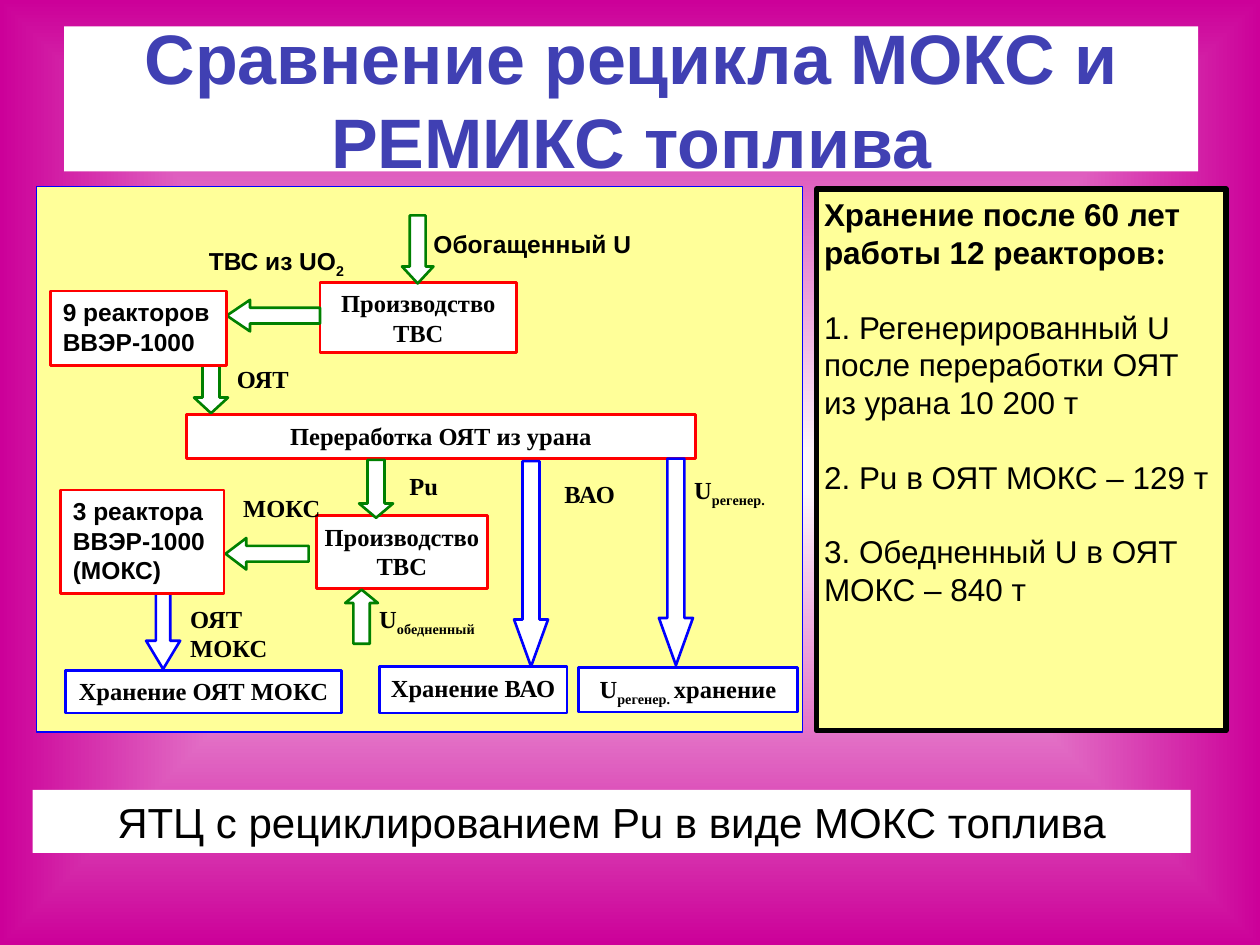
"""Build a slide comparing MOX and REMIX fuel recycling, with a flow diagram."""
from dataclasses import dataclass

from lxml import etree
from pptx import Presentation
from pptx.dml.color import RGBColor
from pptx.enum.shapes import MSO_SHAPE
from pptx.enum.text import MSO_ANCHOR, PP_ALIGN
from pptx.oxml.ns import qn
from pptx.util import Inches, Pt

RECT = MSO_SHAPE.RECTANGLE
DOWN, UP, LEFT = MSO_SHAPE.DOWN_ARROW, MSO_SHAPE.UP_ARROW, MSO_SHAPE.LEFT_ARROW
TOP, MID = MSO_ANCHOR.TOP, MSO_ANCHOR.MIDDLE
START, MIDST = PP_ALIGN.LEFT, PP_ALIGN.CENTER


@dataclass(frozen=True)
class Theme:
    white: str = "FFFFFF"
    black: str = "000000"
    pink: str = "CC0099"
    cream: str = "FFFF99"
    navy: str = "4040B3"
    red: str = "FF0000"
    blue: str = "0000FF"
    green: str = "008000"
    sans: str = "Arial"
    serif: str = "Times New Roman"
    head: int = 40
    foot: int = 24
    body: int = 18
    note: int = 14
    gap: int = 21


T = Theme()
COLS = 100
PANEL = (2.9, 14.8, 60.8, 43.3)
SIDE = (64.8, 15, 32.5, 43)
HEAD = (5.1, 2.1, 90, 11.5)
FOOT = (2.6, 62.7, 91.9, 5)

TITLE = "Сравнение рецикла МОКС и РЕМИКС топлива"
CLOSE = "ЯТЦ с рециклированием Pu в виде МОКС топлива"
LEAD = "Хранение после 60 лет работы 12 реакторов"
FACTS = [
    "1. Регенерированный U после переработки ОЯТ из урана 10 200 т",
    "2. Pu в ОЯТ МОКС – 129 т",
    "3. Обедненный U в ОЯТ МОКС – 840 т",
]
STEPS = [
    ("Переработка ОЯТ из урана", (14.8, 32.9, 40.4, 3.5), T.red, 0.06),
    ("Производство ТВС", (25.4, 22.4, 15.6, 5.6), T.red, 0.02),
    ("Производство ТВС", (25.1, 40.9, 13.6, 5.8), T.red, 0.02),
    ("Хранение ОЯТ МОКС", (5.2, 53.2, 21.9, 3.4), T.blue, 0.02),
    ("Хранение ВАО", (30.1, 52.9, 14.9, 3.7), T.blue, 0.02),
    ("U_регенер. _хранение", (45.9, 53, 17.4, 3.5), T.blue, 0),
]
ARROWS = [
    (DOWN, (31.9, 17.1, 2.5, 5.4), T.green, 0.5, 0.54),
    (LEFT, (18, 23.8, 7.4, 2.5), T.green, 0.5, 0.74),
    (DOWN, (15.4, 27.8, 2.7, 5), T.green, 0.5, 0.46),
    (DOWN, (28.5, 36.5, 2.7, 4.6), T.green, 0.5, 0.42),
    (LEFT, (17.9, 42.7, 6.6, 2.5), T.green, 0.5, 0.66),
    (UP, (27.4, 46.8, 2.6, 4.3), T.green, 0.5, 0.41),
    (DOWN, (11.6, 46.7, 2.7, 6.4), T.blue, 0.42, 0.83),
    (DOWN, (40.8, 36.6, 2.7, 16.3), T.blue, 0.5, 1.38),
    (DOWN, (52.3, 36.4, 2.7, 16.4), T.blue, 0.5, 1.39),
]
PLANTS = [
    ("9 реакторов ВВЭР-1000", (4, 23.1, 14, 5.9)),
    ("3 реактора ВВЭР-1000 (МОКС)", (4.8, 38.9, 13, 8.2)),
]
LABELS = [
    ("Обогащенный U", (34.4, 18.2, 16.8, 2.6), T.sans, START),
    ("ТВС из UO_2", (15.8, 19.5, 12.3, 4), T.sans, MIDST),
    ("ОЯТ", (18.8, 28.9, 5, 2.5), T.serif, START),
    ("U_регенер.", (55.1, 37.7, 6.8, 3.6), T.serif, START),
    ("ВАО", (44.8, 38, 5, 2.5), T.serif, START),
    ("Pu", (32.5, 37.4, 4.7, 2), T.serif, START),
    ("МОКС", (19.3, 39.1, 7, 2.5), T.serif, START),
    ("ОЯТ МОКС", (15.1, 47.9, 8, 4.3), T.serif, START),
    ("U_обедненный", (30.1, 47.9, 9.8, 3.3), T.serif, START),
]

deck = Presentation()
deck.slide_width, deck.slide_height = Inches(10), Inches(7.5)
slide = deck.slides.add_slide(deck.slide_layouts[5])
unit = deck.slide_width / COLS


def place(cell):
    return [round(n * unit) for n in cell]


def paint(shape, fill, line=None, width=1.5):
    shape.fill.solid()
    shape.fill.fore_color.rgb = RGBColor.from_string(fill)
    if line:
        shape.line.color.rgb = RGBColor.from_string(line)
        shape.line.width = Pt(width)
    else:
        shape.line.fill.background()


def draw(kind, cell, fill, line=None, width=1.5):
    shape = slide.shapes.add_shape(kind, *place(cell))
    shape.shadow.inherit = False
    paint(shape, fill, line, width)
    return shape


def frame(shape, side=0.1, edge=0.05, anchor=TOP):
    box = shape.text_frame
    box.word_wrap = True
    box.vertical_anchor = anchor
    box.margin_left = box.margin_right = Inches(side)
    box.margin_top = box.margin_bottom = Inches(edge)
    return box


def put(para, text, size, font, bold=False, tint=T.black):
    """Add runs to a paragraph; every second part between underscores is a subscript."""
    for spot, part in enumerate(text.split("_")):
        run = para.add_run()
        run.text = part
        run.font.size, run.font.name, run.font.bold = Pt(size), font, bold
        run.font.color.rgb = RGBColor.from_string(tint)
        if spot % 2:
            run.font._element.set("baseline", "-25000")


def line(box, text, size, font, bold=True, align=START, tint=T.black):
    para = box.paragraphs[0]
    para.alignment = align
    put(para, text, size, font, bold, tint)


def backdrop():
    fill = slide.background.fill
    fill.gradient()
    for stop, tint, spot in zip(fill.gradient_stops, (T.white, T.pink), (0, 1)):
        stop.color.rgb = RGBColor.from_string(tint)
        stop.position = spot
    grad = slide.background._cSld.find(".//" + qn("a:gradFill"))
    grad.remove(grad.find(qn("a:lin")))
    shade = etree.SubElement(grad, qn("a:path"), {"path": "shape"})
    etree.SubElement(shade, qn("a:fillToRect"), dict.fromkeys("ltrb", "50000"))


def banner():
    title = slide.shapes.title
    title.left, title.top, title.width, title.height = place(HEAD)
    paint(title, T.white)
    line(frame(title, anchor=MID), TITLE, T.head, T.sans, True, MIDST, T.navy)
    foot = draw(RECT, FOOT, T.white)
    line(frame(foot), CLOSE, T.foot, T.sans, False, MIDST)


def summary():
    box = frame(draw(RECT, SIDE, T.cream, T.black, 3), 0.06)
    line(box, LEAD, T.body, T.sans)
    put(box.paragraphs[0], ":", T.body, T.serif, True)
    for fact in FACTS:
        para = box.add_paragraph()
        para.alignment = START
        para.space_before = Pt(T.gap)
        put(para, fact, T.body, T.sans)


def diagram():
    draw(RECT, PANEL, T.cream, T.blue, 1)
    for text, cell, tint, side in STEPS:
        box = frame(draw(RECT, cell, T.white, tint), side)
        line(box, text, T.note, T.serif, align=MIDST)
    for kind, cell, tint, shaft, tip in ARROWS:
        arrow = draw(kind, cell, T.white, tint)
        arrow.adjustments[0], arrow.adjustments[1] = shaft, tip
    for text, cell in PLANTS:
        line(frame(draw(RECT, cell, T.white, T.red)), text, T.note, T.sans)
    for text, cell, font, align in LABELS:
        box = frame(slide.shapes.add_textbox(*place(cell)), 0, 0)
        line(box, text, T.note, font, align=align)


backdrop()
banner()
diagram()
summary()
deck.save("out.pptx")
